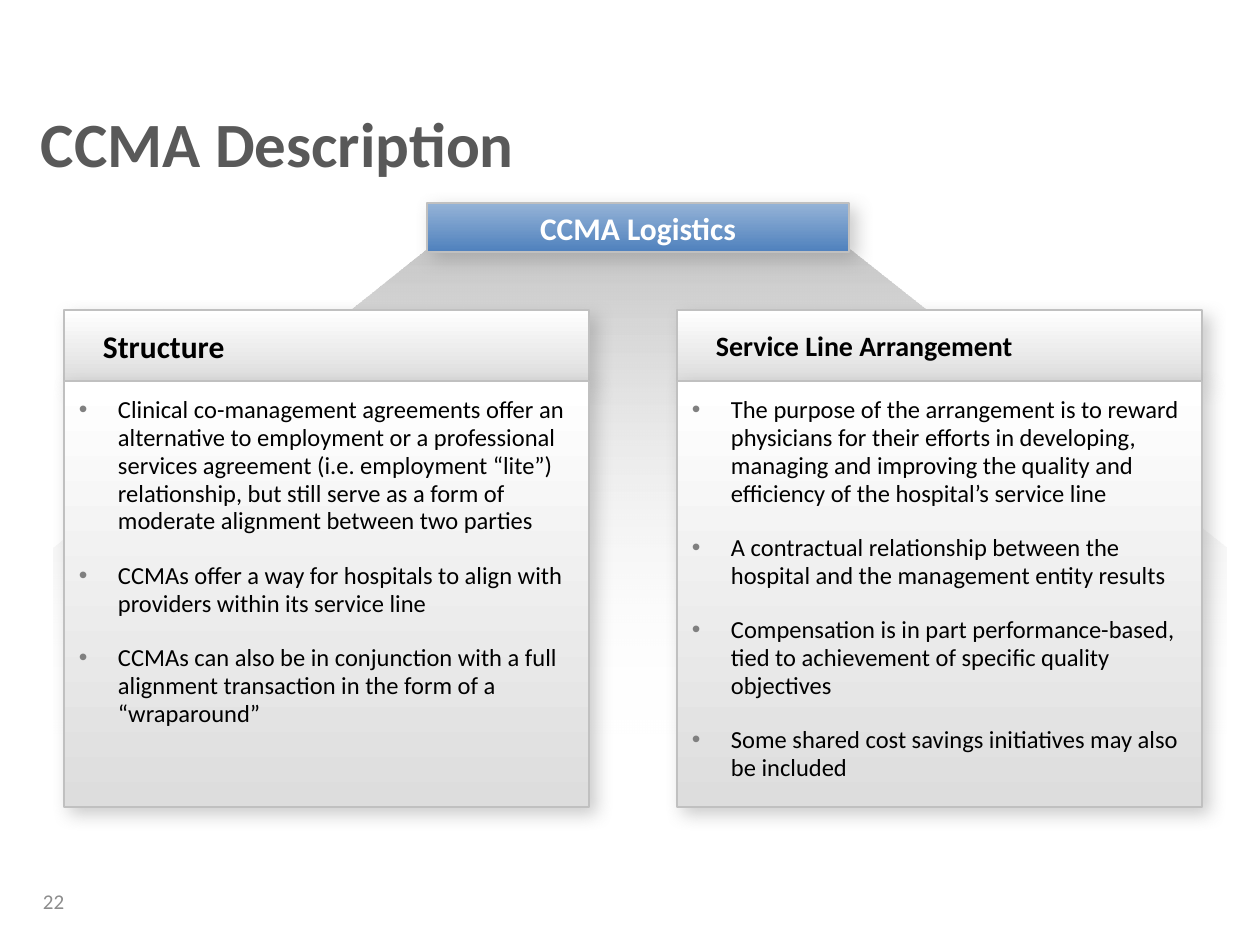
"""Builds the CCMA Description slide: a banner fanning out to two text cards."""
from dataclasses import dataclass

from lxml import etree
from pptx import Presentation
from pptx.dml.color import RGBColor
from pptx.enum.shapes import MSO_SHAPE
from pptx.enum.text import MSO_ANCHOR, PP_ALIGN
from pptx.oxml.ns import qn
from pptx.util import Emu, Pt

PX = 914400 / 126
RECT = MSO_SHAPE.RECTANGLE
TOP, MIDDLE = MSO_ANCHOR.TOP, MSO_ANCHOR.MIDDLE
LEFT, CENTER = PP_ALIGN.LEFT, PP_ALIGN.CENTER
FONT = "Calibri"
COLORS = {
    "title": "595959", "number": "8C8C8C", "text": "000000", "white": "FFFFFF",
    "panel": "DDDDDD", "banner_top": "95B3D7", "banner_end": "4F81BD",
    "line": "C0C0C0", "shade": "808080", "fan": "C8C8C8",
}
CARD_W, HEADER_Y, HEADER_H, BODY_Y, BODY_H = 525, 310, 71, 381, 426
FAN = [(428, 249), (849, 249), (1226, 547), (1226, 735), (54, 735), (54, 547)]


@dataclass
class Box:
    """A rectangle in px."""
    x: int
    y: int
    w: int
    h: int


@dataclass
class Style:
    """Look of a text frame, with insets in px."""
    size: int
    color: str
    bold: bool = False
    anchor: MSO_ANCHOR = MIDDLE
    align: PP_ALIGN = LEFT
    insets: tuple[int, int, int, int] = (0, 0, 0, 0)
    bullets: bool = False


@dataclass
class Card:
    """A headed card with bullet points."""
    x: int
    title: str
    title_size: int
    points: list[str]


CARDS = [
    Card(677, "Service Line Arrangement", 16, [
        "The purpose of the arrangement is to reward physicians for their efforts in "
        "developing, managing and improving the quality and efficiency of the "
        "hospital’s service line",
        "A contractual relationship between the hospital and the management entity results",
        "Compensation is in part performance-based, tied to achievement of specific "
        "quality objectives",
        "Some shared cost savings initiatives may also be included",
    ]),
    Card(64, "Structure", 18, [
        "Clinical co-management agreements offer an alternative to employment or a "
        "professional services agreement (i.e. employment “lite”) relationship, but "
        "still serve as a form of moderate alignment between two parties",
        "CCMAs offer a way for hospitals to align with providers within its service line",
        "CCMAs can also be in conjunction with a full alignment transaction in the form "
        "of a “wraparound”",
    ]),
]


def px(n: int) -> Emu:
    """Turn px into EMU."""
    return Emu(round(n * PX))


def rgb(name: str) -> RGBColor:
    """Look up a named colour."""
    return RGBColor.from_string(COLORS[name])


def child(parent, tag: str, **attrs):
    """Append a DrawingML element."""
    return etree.SubElement(parent, qn(tag), {k: str(v) for k, v in attrs.items()})


def add_bullet(p) -> None:
    """Give a paragraph a grey hanging bullet."""
    pPr = p._p.get_or_add_pPr()
    pPr.set("marL", str(px(39)))
    pPr.set("indent", str(-px(39)))
    child(child(pPr, "a:buClr"), "a:srgbClr", val=COLORS["shade"])
    child(pPr, "a:buFont", typeface="Arial")
    child(pPr, "a:buChar", char="•")


def write(sp, lines: list[str], style: Style) -> None:
    """Fill a shape with styled paragraphs."""
    tf = sp.text_frame
    tf.word_wrap = True
    tf.vertical_anchor = style.anchor
    tf.margin_left, tf.margin_top, tf.margin_right, tf.margin_bottom = map(px, style.insets)
    for i, line in enumerate(lines):
        p = tf.paragraphs[0] if i == 0 else tf.add_paragraph()
        p.add_run().text = line
        p.alignment = style.align
        if style.bullets:
            p.line_spacing = 0.95
            p.space_after = Pt(8)
            if i:
                p.space_before = Pt(7)
            add_bullet(p)
        p.font.name = FONT
        p.font.size = Pt(style.size)
        p.font.bold = style.bold
        p.font.color.rgb = rgb(style.color)


def add_label(s, box: Box, text: str, style: Style) -> None:
    """Add a plain text box."""
    sp = s.shapes.add_textbox(px(box.x), px(box.y), px(box.w), px(box.h))
    write(sp, [text], style)


def shade(sp, start: str, end: str) -> None:
    """Fill a shape with a gradient running downward."""
    sp.fill.gradient()
    sp.fill.gradient_angle = 270
    for stop, name in zip(sp.fill.gradient_stops, (start, end)):
        stop.color.rgb = rgb(name)


def add_panel(s, box: Box, start: str, end: str, lines: list[str], style: Style) -> None:
    """Add a shaded rectangle with a soft shadow and text."""
    sp = s.shapes.add_shape(RECT, px(box.x), px(box.y), px(box.w), px(box.h))
    shade(sp, start, end)
    sp.line.color.rgb = rgb("line")
    sp.line.width = Pt(1)
    sp.shadow.inherit = False
    effects = sp._element.spPr.find(qn("a:effectLst"))
    shadow = child(effects, "a:outerShdw", blurRad=Pt(10), dist=Pt(5), dir=45 * 60000,
                   algn="tl", rotWithShape=0)
    child(child(shadow, "a:srgbClr", val=COLORS["shade"]), "a:alpha", val=40000)
    write(sp, lines, style)


def add_fan(s) -> None:
    """Add the backdrop that fades out below the banner."""
    points = [(px(x), px(y)) for x, y in FAN]
    builder = s.shapes.build_freeform(*points[0])
    builder.add_line_segments(points[1:], close=True)
    sp = builder.convert_to_shape()
    shade(sp, "fan", "white")
    last = sp._element.spPr.findall(".//" + qn("a:srgbClr"))[-1]
    child(last, "a:alpha", val=0)
    sp.line.fill.background()
    sp.shadow.inherit = False


def add_card(s, card: Card) -> None:
    """Add a card's header and body."""
    add_panel(s, Box(card.x, HEADER_Y, CARD_W, HEADER_H), "white", "panel", [card.title],
              Style(card.title_size, "text", bold=True, insets=(39, 0, 0, 0)))
    add_panel(s, Box(card.x, BODY_Y, CARD_W, BODY_H), "white", "panel", card.points,
              Style(14, "text", anchor=TOP, insets=(15, 15, 20, 10), bullets=True))


def main() -> None:
    """Build and save the slide."""
    prs = Presentation()
    prs.slide_width, prs.slide_height = px(1260), px(945)
    s = prs.slides.add_slide(prs.slide_layouts[6])
    add_label(s, Box(28, 101, 1201, 137), "CCMA Description",
              Style(36, "title", bold=True, anchor=TOP, insets=(13, 4, 13, 6)))
    add_label(s, Box(30, 876, 249, 50), "22", Style(12, "number", insets=(13, 6, 13, 6)))
    add_fan(s)
    right, left = CARDS
    add_card(s, right)
    add_panel(s, Box(427, 203, 422, 49), "banner_top", "banner_end", ["CCMA Logistics"],
              Style(18, "white", bold=True, align=CENTER))
    add_card(s, left)
    prs.save("out.pptx")


if __name__ == "__main__":
    main()
